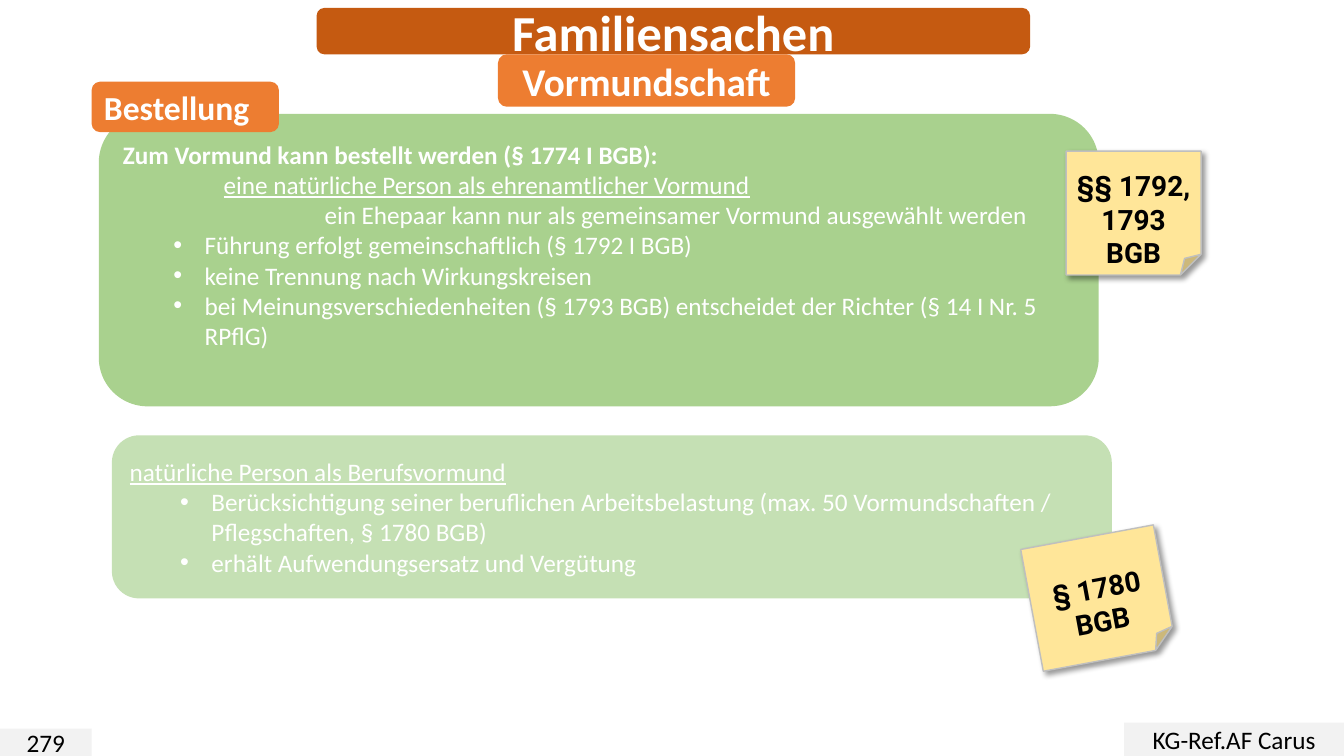
from lxml.etree import SubElement
from pptx import Presentation
from pptx.dml.color import RGBColor
from pptx.enum.shapes import MSO_SHAPE
from pptx.enum.text import MSO_ANCHOR, PP_ALIGN
from pptx.oxml import parse_xml
from pptx.oxml.ns import qn
from pptx.util import Cm, Pt

NS = "http://schemas.openxmlformats.org/drawingml/2006/main"
HUES = {
    "rust": "C55A11", "orange": "ED7D31", "green": "A9D18E", "pale": "C5E0B4",
    "note": "FFE699", "edge": "BFBFBF", "grey": "F2F2F2",
    "white": "FFFFFF", "black": "000000",
}
LABEL = {"name": "Calibri", "size": Pt(18), "bold": False}
STICKY = {"name": "Roboto", "size": Pt(20), "bold": True}
WIDE, HIGH = 33.87, 19.05


def hue(name):
    """Return the colour of the given name."""
    return RGBColor.from_string(HUES[name])


def block(slide, kind, box, fill):
    """Add a plain filled shape with wrapped, centred-height text."""
    shape = slide.shapes.add_shape(kind, *map(Cm, box))
    shape.shadow.inherit = False
    shape.fill.solid()
    shape.fill.fore_color.rgb = hue(fill)
    shape.line.fill.background()
    frame = shape.text_frame
    for key, value in {"word_wrap": True, "vertical_anchor": MSO_ANCHOR.MIDDLE}.items():
        setattr(frame, key, value)
    return shape


def write(shape, lines, ink, align=PP_ALIGN.LEFT):
    """Fill a shape with one paragraph per (text, font, indent, bullet) line."""
    frame = shape.text_frame
    for num, (text, font, left, dot) in enumerate(lines):
        para = frame.paragraphs[0] if num == 0 else frame.add_paragraph()
        para.alignment = align
        run = para.add_run()
        run.text = text
        run.font.color.rgb = hue(ink)
        for key, value in font.items():
            setattr(run.font, key, value)
        props = para._p.get_or_add_pPr()
        props.set("marL", str(Cm(left)))
        props.set("indent", str(Cm(-0.79 if dot else 0)))
        if dot:
            SubElement(props, qn("a:buFont"), typeface="Arial")
            SubElement(props, qn("a:buChar"), char="•")


def label(slide, kind, box, fill, text, ink="white", align=PP_ALIGN.CENTER, **font):
    """Add a shape holding a single line."""
    shape = block(slide, kind, box, fill)
    write(shape, [(text, LABEL | font, 0, False)], ink, align)


def head(slide, box):
    """Place the title bar and the topic below it."""
    left, top, width, height = box
    shape = MSO_SHAPE.ROUNDED_RECTANGLE
    label(slide, shape, box, "rust", "Familiensachen", size=Pt(36), bold=True)
    topic = (left + 4.57, top + height, 7.49, 1.32)
    label(slide, shape, topic, "orange", "Vormundschaft", size=Pt(28), bold=True)


def panel(slide, box, fill, lines, foot=0.13):
    """Place a rounded panel with its list of lines."""
    shape = block(slide, MSO_SHAPE.ROUNDED_RECTANGLE, box, fill)
    shape.text_frame.margin_bottom = Cm(foot)
    write(shape, [(text, LABEL | font, left, dot) for text, font, left, dot in lines], "white")


def note(slide, box, texts, turn=0):
    """Place a sticky note with a soft shadow."""
    shape = block(slide, MSO_SHAPE.FOLDED_CORNER, box, "note")
    shape.rotation = turn
    shape.line.color.rgb = hue("edge")
    shape.line.width = Pt(1)
    props = shape._element.spPr
    props.remove(props.find(qn("a:effectLst")))
    props.append(parse_xml(
        f'<a:effectLst xmlns:a="{NS}"><a:outerShdw blurRad="{Pt(4)}" dist="{Pt(3)}" '
        f'dir="2700000" algn="tl" rotWithShape="0"><a:srgbClr val="{HUES["black"]}">'
        '<a:alpha val="40000"/></a:srgbClr></a:outerShdw></a:effectLst>'))
    shape.text_frame.margin_top = Cm(0.95)
    write(shape, [(text, STICKY, 0, False) for text in texts], "black", PP_ALIGN.CENTER)


def choice(slide, box):
    """Place the panel on appointment with its tag and note."""
    left, top, width, height = box
    panel(slide, box, "green", [
        ("Zum Vormund kann bestellt werden (§ 1774 I BGB):", {"bold": True}, 0, False),
        ("eine natürliche Person als ehrenamtlicher Vormund", {"underline": True}, 2.54, False),
        ("ein Ehepaar kann nur als gemeinsamer Vormund ausgewählt werden", {}, 5.08, False),
        ("Führung erfolgt gemeinschaftlich (§ 1792 I BGB)", {}, 2.06, True),
        ("keine Trennung nach Wirkungskreisen", {}, 2.06, True),
        ("bei Meinungsverschiedenheiten (§ 1793 BGB) entscheidet der Richter "
         "(§ 14 I Nr. 5 RPflG)", {}, 2.06, True),
    ], foot=0.9)
    tag = (left - 0.18, top - 0.81, 4.72, 1.27)
    label(slide, MSO_SHAPE.ROUNDED_RECTANGLE, tag, "orange", "Bestellung",
          align=PP_ALIGN.LEFT, size=Pt(24), bold=True)
    note(slide, (left + width - 0.82, top + 0.94, 3.4, 3.12), ["§§ 1792, 1793", "BGB"])


def career(slide, box):
    """Place the panel on professional guardians with its note."""
    left, top, width, height = box
    panel(slide, box, "pale", [
        ("natürliche Person als Berufsvormund", {"underline": True}, 0, False),
        ("Berücksichtigung seiner beruflichen Arbeitsbelastung (max. 50 Vormundschaften / "
         "Pflegschaften, § 1780 BGB)", {}, 2.06, True),
        ("erhält Aufwendungsersatz und Vergütung", {}, 2.06, True),
    ])
    note(slide, (left + width - 2.04, top + 2.54, 3.4, 3.12), ["§ 1780", "BGB"], 349.5)


def foot(slide, box):
    """Place the page number and the author in the bottom corners."""
    left, top, width, height = box
    end = top + height
    for text, side, wide, high in (("279", left, 2.31, 0.69),
                                   ("KG-Ref.AF Carus", left + width - 5.54, 5.54, 0.84)):
        label(slide, MSO_SHAPE.RECTANGLE, (side, end - high, wide, high), "grey", text, "black")


def main():
    """Build the slide and save it."""
    deck = Presentation()
    for key, value in {"slide_width": Cm(WIDE), "slide_height": Cm(HIGH)}.items():
        setattr(deck, key, value)
    slide = deck.slides.add_slide(deck.slide_layouts[6])
    head(slide, (7.98, 0.2, 17.98, 1.17))
    choice(slide, (2.49, 2.87, 25.2, 7.37))
    career(slide, (2.82, 10.97, 25.2, 4.11))
    foot(slide, (0, 18.21, WIDE, 0.84))
    deck.save("out.pptx")


if __name__ == "__main__":
    main()
